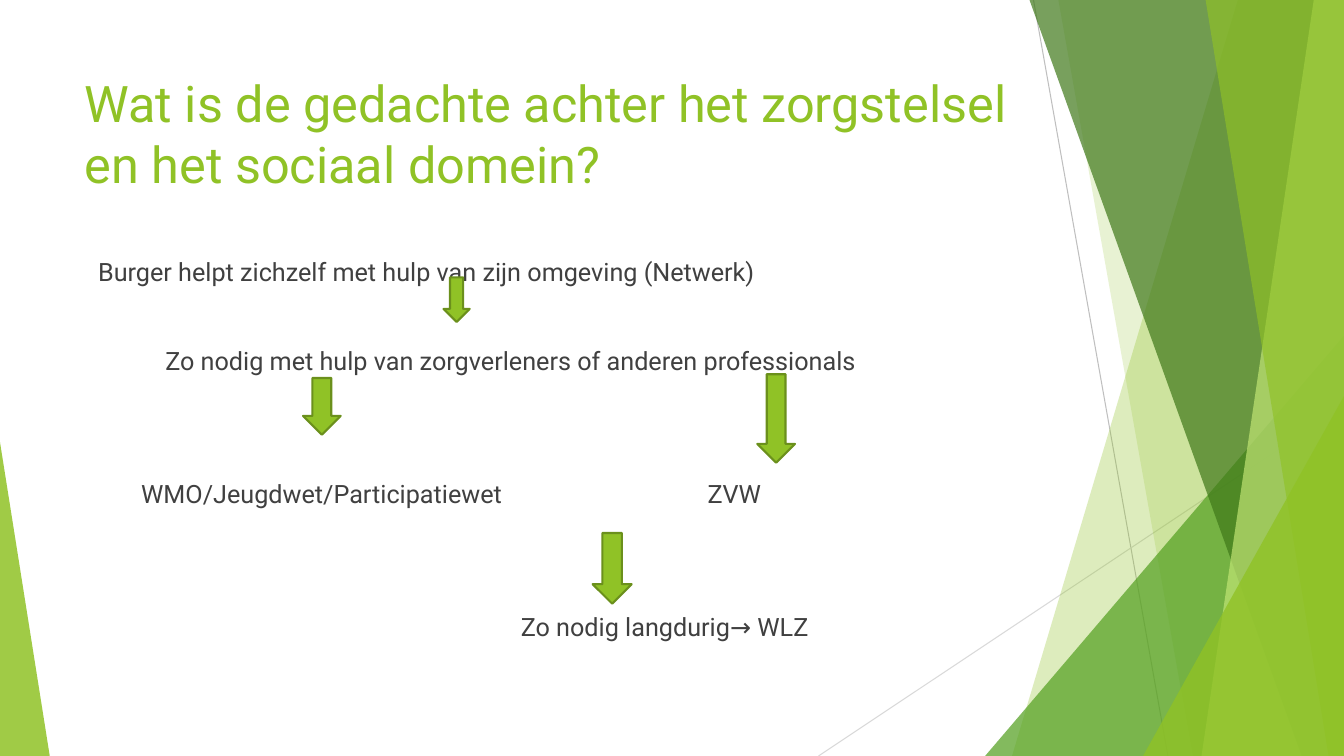
from lxml import etree
from pptx import Presentation
from pptx import util as u
from pptx.dml.color import RGBColor
from pptx.enum import shapes, text
from pptx.oxml.ns import qn

WIDTH, HEIGHT = u.Inches(13.33), u.Inches(7.5)
FONT = "Roboto"
COLORS = {
    "lime": "90C226", "green": "54A021", "forest": "3F7819", "pale": "C0E474",
    "outline": "6B901C", "text": "404040", "grey": "BFBFBF", "light_grey": "D9D9D9",
}
# Label rows, in percent of the slide height
FIRST_ROW, ROW_STEP = 33, 5.86


def x(percent):
    return round(WIDTH * percent / 100)


def y(percent):
    return round(HEIGHT * percent / 100)


def box(left, top, width, height):
    return x(left), y(top), x(width), y(height)


def color(name):
    return RGBColor.from_string(COLORS[name])


def paint(shape, fill, opacity=100, outline=None):
    shape.shadow.inherit = False
    shape.fill.solid()
    shape.fill.fore_color.rgb = color(fill)
    if opacity < 100:
        tint = shape.fill._xPr.find(qn("a:solidFill"))[0]
        etree.SubElement(tint, qn("a:alpha"), val=str(opacity * 1000))
    if outline:
        shape.line.color.rgb = color(outline)
        shape.line.width = u.Pt(1.5)
    else:
        shape.line.fill.background()


def add_ray(slide, start, end, line_color):
    ray = slide.shapes.add_connector(
        shapes.MSO_CONNECTOR.STRAIGHT, x(start[0]), y(start[1]), x(end[0]), y(end[1]))
    ray.line.color.rgb = color(line_color)
    ray.line.width = u.Pt(0.75)
    etree.SubElement(ray._element.spPr, qn("a:effectLst"))


def add_band(slide, top_left, bottom_left, fill, opacity):
    """A band from a slanted left edge to the right edge of the slide."""
    builder = slide.shapes.build_freeform(x(top_left), 0)
    builder.add_line_segments([(WIDTH, 0), (WIDTH, HEIGHT), (x(bottom_left), HEIGHT)])
    paint(builder.convert_to_shape(), fill, opacity)


def add_corner(slide, left, top, width, apex, fill, opacity):
    """A triangle standing on the bottom edge of the slide."""
    corner = slide.shapes.add_shape(
        shapes.MSO_SHAPE.ISOSCELES_TRIANGLE, *box(left, top, width, 100 - top))
    corner.adjustments[0] = apex
    paint(corner, fill, opacity)


def add_decoration(slide):
    add_ray(slide, (76.9, 0), (86.9, 100), "grey")
    add_ray(slide, (100, 53.7), (60.9, 100), "light_grey")
    add_band(slide, 92.1, 75.3, "lime", 30)
    add_band(slide, 78.75, 88.75, "lime", 20)
    add_corner(slide, 73.3, 44.4, 26.7, 1, "green", 72)
    add_band(slide, 76.6, 96.85, "forest", 70)
    add_band(slide, 97.75, 89.4, "pale", 70)
    add_band(slide, 89.7, 98.85, "lime", 65)
    add_corner(slide, 85.05, 52.4, 14.95, 1, "lime", 80)
    add_corner(slide, 0, 58.5, 3.7, 0, "lime", 85)


def write(shape, wording, size, font_color, anchor):
    frame = shape.text_frame
    frame.text = wording
    frame.word_wrap = True
    frame.auto_size = text.MSO_AUTO_SIZE.NONE
    frame.vertical_anchor = anchor
    paragraph = frame.paragraphs[0]
    paragraph.alignment = text.PP_ALIGN.LEFT
    paragraph.font.name = FONT
    paragraph.font.size = u.Pt(size)
    paragraph.font.color.rgb = color(font_color)


def add_title(slide, wording):
    title = slide.shapes.title
    title.left, title.top, title.width, title.height = box(5.55, 8.93, 70.5, 19.2)
    write(title, wording, 36, "lime", text.MSO_ANCHOR.TOP)


def add_label(slide, row, left, width, wording):
    label = slide.shapes.add_textbox(
        *box(left, FIRST_ROW + row * ROW_STEP, width, ROW_STEP))
    frame = label.text_frame
    frame.margin_left = frame.margin_right = frame.margin_top = frame.margin_bottom = 0
    write(label, wording, 18, "text", text.MSO_ANCHOR.MIDDLE)


def add_down_arrow(slide, left, top, width, height):
    arrow = slide.shapes.add_shape(
        shapes.MSO_SHAPE.DOWN_ARROW, *box(left, top, width, height))
    paint(arrow, "lime", outline="outline")


def main():
    presentation = Presentation()
    presentation.slide_width, presentation.slide_height = WIDTH, HEIGHT
    slide = presentation.slides.add_slide(presentation.slide_layouts[5])

    # Background and title
    add_decoration(slide)
    add_title(slide, "Wat is de gedachte achter het zorgstelsel en het sociaal domein?")

    # Steps of care: row, left, width, wording
    for label in (
        (0, 7.3, 52, "Burger helpt zichzelf met hulp van zijn omgeving (Netwerk)"),
        (2, 12.3, 55, "Zo nodig met hulp van zorgverleners of anderen professionals"),
        (5, 10.5, 30, "WMO/Jeugdwet/Participatiewet"),
        (5, 52.65, 8, "ZVW"),
        (8, 38.75, 25, "Zo nodig langdurig→ WLZ"),
    ):
        add_label(slide, *label)

    # Arrows between the steps: left, top, width, height
    for arrow in (
        (22.55, 50, 2.8, 7.5),
        (56.35, 49.5, 2.8, 11.7),
        (33, 36.7, 1.95, 5.9),
        (44.1, 70.5, 2.9, 9.35),
    ):
        add_down_arrow(slide, *arrow)

    presentation.save("out.pptx")


if __name__ == "__main__":
    main()
